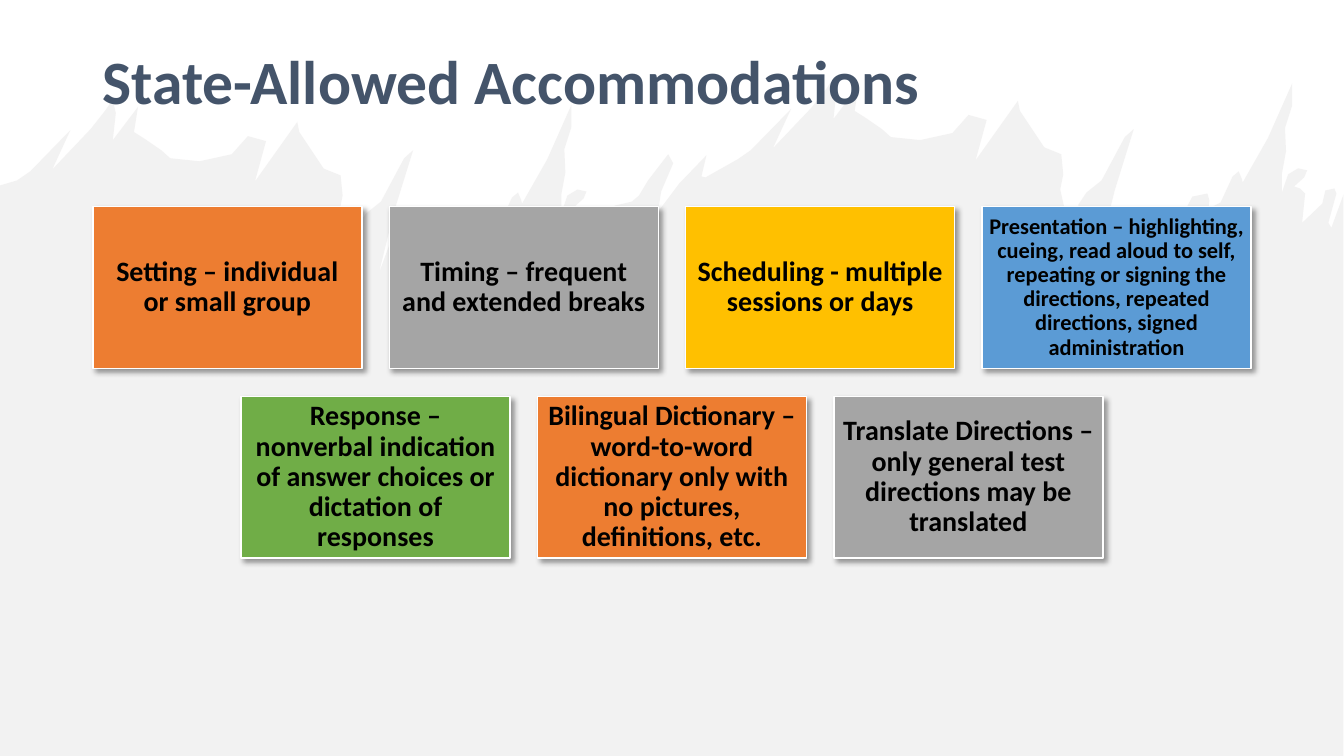
from lxml import etree
from pptx import Presentation
from pptx.dml.color import RGBColor
from pptx.enum.shapes import MSO_SHAPE as Preset
from pptx.enum.text import MSO_ANCHOR as Anchor, PP_ALIGN as Align
from pptx.oxml import parse_xml
from pptx.oxml.ns import nsdecls, qn
from pptx.util import Cm, Pt

FONT = "Calibri"
PAGE_WIDTH, PAGE_HEIGHT = 33.87, 19.05
BOX_WIDTH, BOX_HEIGHT = 6.78, 4.07
COLUMN_STEP, ROW_STEP, FIRST_ROW = 7.47, 4.78, 5.21

RIDGE_UNIT = Cm(0.0254)
RIDGE_SHIFT = (715, -21)
RIDGE = [
    (17, 179), (30, 170), (70, 129), (52, 168), (90, 128), (105, 109),
    (109, 103), (113, 104), (115, 112), (112, 139), (137, 106), (133, 131),
    (144, 138), (160, 149), (169, 157), (198, 160), (230, 153), (246, 135),
    (264, 140), (253, 180), (295, 121), (297, 131), (321, 167), (323, 168),
    (338, 174), (340, 194), (337, 209), (341, 227), (339, 242), (342, 255),
    (355, 242), (355, 224), (363, 212), (378, 200), (401, 157), (410, 149),
    (391, 210), (376, 271), (390, 233), (387, 259), (397, 273), (400, 273),
    (409, 262), (415, 256), (436, 240), (439, 251), (443, 256), (449, 253),
    (468, 216), (483, 213), (485, 220), (484, 228), (496, 222), (508, 196),
    (514, 191), (517, 198), (518, 202), (543, 158), (567, 104), (567, 126),
    (560, 148), (561, 171), (557, 193), (557, 212), (563, 194), (573, 188),
    (582, 190), (579, 197), (569, 206), (575, 208), (580, 213), (577, 242),
    (597, 223), (600, 210),
]
SADDLE = [
    (606, 207), (610, 204), (627, 200), (634, 194), (643, 179), (663, 153),
    (668, 162), (656, 190), (653, 210), (674, 182), (701, 154), (696, 175),
    (700, 176),
]
RIGHT_END = [
    (1324, 187), (1326, 192), (1318, 221), (1321, 226), (1333, 193),
    (1333, 750), (0, 750),
]

ROWS = [
    [
        ("Setting – individual or small group", "ED7D31", 20),
        ("Timing – frequent and extended breaks", "A5A5A5", 20),
        ("Scheduling - multiple sessions or days", "FFC000", 20),
        ("Presentation – highlighting, cueing, read aloud to self, repeating "
         "or signing the directions, repeated directions, signed "
         "administration", "5B9BD5", 16),
    ],
    [
        ("Response – nonverbal indication of answer choices or dictation of "
         "responses", "70AD47", 20),
        ("Bilingual Dictionary – word-to-word dictionary only with no "
         "pictures, definitions, etc.", "ED7D31", 20),
        ("Translate Directions – only general test directions may be "
         "translated", "A5A5A5", 20),
    ],
]


def paint(color_format, color):
    color_format.rgb = RGBColor.from_string(color)


def fill_solid(shape, color):
    shape.fill.solid()
    paint(shape.fill.fore_color, color)


def write(frame, text, size, color, align):
    frame.word_wrap = True
    frame.vertical_anchor = Anchor.MIDDLE
    para = frame.paragraphs[0]
    para.alignment = align
    para.line_spacing = 0.9
    span = para.add_run()
    span.text = text
    span.font.name = FONT
    span.font.size = Pt(size)
    span.font.bold = True
    paint(span.font.color, color)


def add_shadow(shape):
    shape.element.spPr.append(parse_xml(
        f'<a:effectLst {nsdecls("a")}>'
        f'<a:outerShdw blurRad="{Pt(4)}" dist="{Pt(3)}" dir="2700000" '
        'algn="tl" rotWithShape="0"><a:srgbClr val="000000">'
        '<a:alpha val="40000"/></a:srgbClr></a:outerShdw></a:effectLst>'))


def add_title(page, text):
    title = page.shapes.title
    title.left, title.top = Cm(2.33), Cm(0.92)
    title.width, title.height = Cm(29.21), Cm(2.42)
    write(title.text_frame, text, 44, "44546A", Align.LEFT)


def add_backdrop(page):
    shift_x, shift_y = RIDGE_SHIFT
    right_ridge = [(x + shift_x, y + shift_y) for x, y in RIDGE]
    outline = page.shapes.build_freeform(0, 184, scale=RIDGE_UNIT)
    outline.add_line_segments(RIDGE + SADDLE + right_ridge + RIGHT_END)
    backdrop = outline.convert_to_shape()
    backdrop.shadow.inherit = False
    fill_solid(backdrop, "E7E6E6")
    backdrop.line.fill.background()
    tint = backdrop.element.spPr.find(f".//{qn('a:srgbClr')}")
    etree.SubElement(tint, qn("a:alpha"), val="50000")
    page.shapes.title.element.addprevious(backdrop.element)


def add_box(page, left, top, text, color, size):
    box = page.shapes.add_shape(
        Preset.RECTANGLE, Cm(left), Cm(top), Cm(BOX_WIDTH), Cm(BOX_HEIGHT))
    fill_solid(box, color)
    paint(box.line.color, "FFFFFF")
    box.line.width = Pt(1)
    add_shadow(box)
    frame = box.text_frame
    inset = Cm(size / 100)
    frame.margin_left = frame.margin_right = inset
    frame.margin_top = frame.margin_bottom = inset
    write(frame, text, size, "000000", Align.CENTER)


def add_row(page, top, entries):
    row_width = COLUMN_STEP * (len(entries) - 1) + BOX_WIDTH
    start = (PAGE_WIDTH - row_width) / 2
    for column, entry in enumerate(entries):
        add_box(page, start + column * COLUMN_STEP, top, *entry)


def main():
    deck = Presentation()
    deck.slide_width, deck.slide_height = Cm(PAGE_WIDTH), Cm(PAGE_HEIGHT)
    page = deck.slides.add_slide(deck.slide_layouts[5])
    add_title(page, "State-Allowed Accommodations")
    add_backdrop(page)
    for index, entries in enumerate(ROWS):
        add_row(page, FIRST_ROW + index * ROW_STEP, entries)
    deck.save("out.pptx")


if __name__ == "__main__":
    main()
